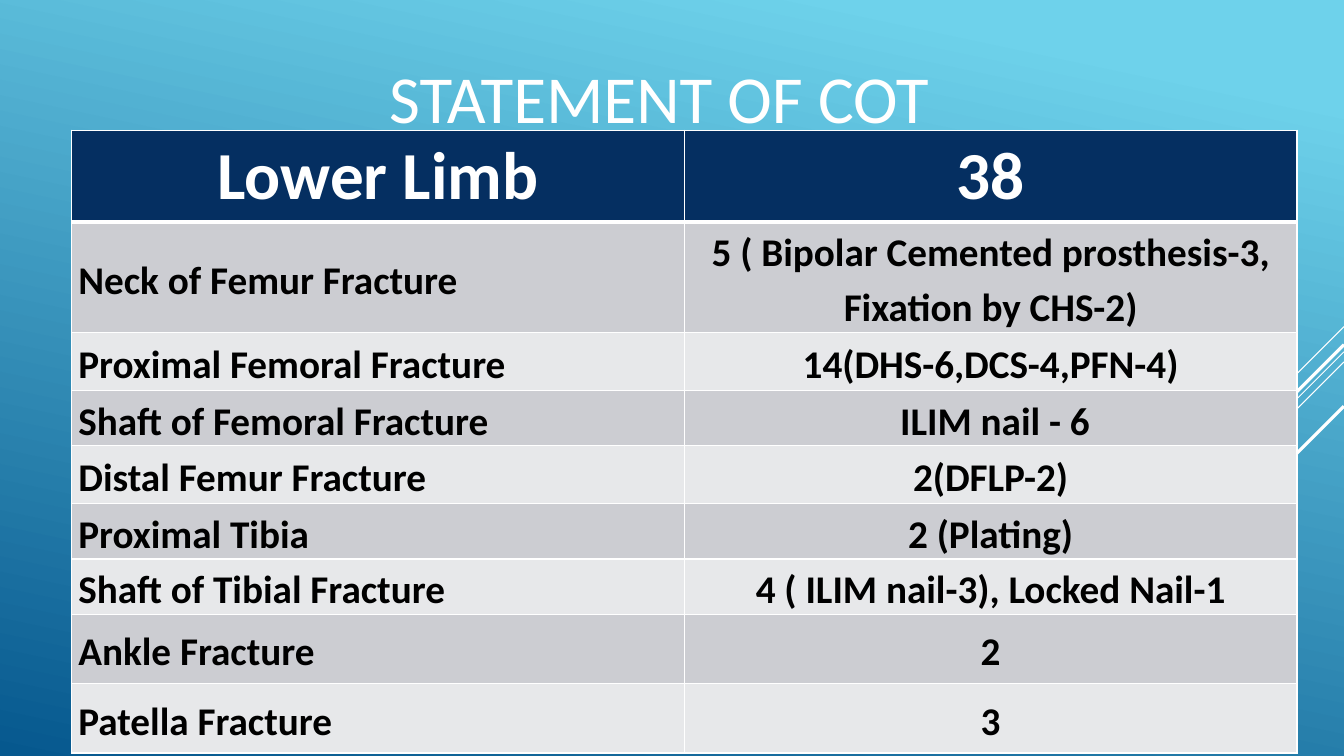
from dataclasses import dataclass

from lxml import etree
from pptx import Presentation
from pptx import util as u
from pptx.dml.color import RGBColor
from pptx.enum import shapes, text
from pptx.oxml import ns

FONT = "Calibri"
WHITE, BLACK, NAVY = "FFFFFF", "000000", "052F61"
BANDS = ("CCCDD2", "E7E8EA")
SLIDE_WIDTH, SLIDE_HEIGHT = 960, 540
COLUMN_WIDTH = 437.75
HEADER_RULE, THIN_RULE = 3, 1


@dataclass
class Diagonal:
    """A 45-degree line running down and left from the right slide edge."""
    top: float
    drop: float
    weight: float


@dataclass
class Row:
    label: str
    value: str
    height: float


DIAGONALS = [
    Diagonal(233.3, 72, 0.75),
    Diagonal(251.3, 234.7, 0.75),
    Diagonal(258.5, 149, 0.75),
    Diagonal(246.2, 137.5, 2.25),
    Diagonal(290.2, 100, 2.25),
]

ROWS = [
    Row("Lower Limb", "38", 65.8),
    Row("Neck of Femur Fracture",
        "5 ( Bipolar Cemented prosthesis-3, Fixation by CHS-2)", 78.6),
    Row("Proximal Femoral Fracture", "14(DHS-6,DCS-4,PFN-4)", 41.5),
    Row("Shaft of Femoral Fracture", " ILIM nail - 6", 39.5),
    Row("Distal Femur Fracture", "2(DFLP-2)", 41.5),
    Row("Proximal Tibia", "2 (Plating)", 39.5),
    Row("Shaft of Tibial Fracture", "4 ( ILIM nail-3), Locked Nail-1", 39.5),
    Row("Ankle Fracture", "2", 49.5),
    Row("Patella Fracture", "3", 49.5),
]

HEADER_FORMAT = {"size": u.Pt(48), "bold": True, "name": FONT}
BODY_FORMAT = {"size": u.Pt(28), "bold": True, "name": FONT}
TITLE_FORMAT = {"size": u.Pt(48), "bold": False, "name": FONT}
BODY_CELL = {
    "vertical_anchor": text.MSO_ANCHOR.MIDDLE,
    "margin_left": u.Pt(5), "margin_right": u.Pt(5),
    "margin_top": 0, "margin_bottom": 0,
}


def color(value: str) -> RGBColor:
    return RGBColor.from_string(value)


def apply(target, values: dict) -> None:
    """Set each named attribute of the target."""
    for name, value in values.items():
        setattr(target, name, value)


def write(paragraph, content: str, font_format: dict, font_color: str) -> None:
    run = paragraph.add_run()
    run.text = content
    apply(run.font, font_format)
    run.font.color.rgb = color(font_color)


def paint_background(slide) -> None:
    fill = slide.background.fill
    fill.gradient()
    fill.gradient_angle = 258
    stops = ((0.1, "6ED2EB"), (1, "06588E"))
    for stop, (position, value) in zip(fill.gradient_stops, stops):
        stop.position = position
        stop.color.rgb = color(value)


def draw_diagonal(slide, diagonal: Diagonal) -> None:
    connector = slide.shapes.add_connector(
        shapes.MSO_CONNECTOR.STRAIGHT,
        u.Pt(SLIDE_WIDTH), u.Pt(diagonal.top),
        u.Pt(SLIDE_WIDTH - diagonal.drop), u.Pt(diagonal.top + diagonal.drop))
    connector.line.color.rgb = color(WHITE)
    connector.line.width = u.Pt(diagonal.weight)
    etree.SubElement(connector._element.spPr, ns.qn("a:effectLst"))


def draw_title(slide) -> None:
    box = slide.shapes.add_textbox(u.Pt(51), u.Pt(12), u.Pt(798), u.Pt(114.5))
    apply(box.text_frame, {
        "word_wrap": True,
        "vertical_anchor": text.MSO_ANCHOR.MIDDLE,
        "margin_left": u.Pt(227),
    })
    write(box.text_frame.paragraphs[0], "STATEMENT OF COT",
          TITLE_FORMAT, WHITE)


def set_borders(cell, top: float, bottom: float) -> None:
    properties = cell._tc.get_or_add_tcPr()
    weights = {"lnL": THIN_RULE, "lnR": THIN_RULE, "lnT": top, "lnB": bottom}
    for index, (tag, weight) in enumerate(weights.items()):
        line = etree.Element(ns.qn(f"a:{tag}"), w=str(u.Pt(weight)))
        fill = etree.SubElement(line, ns.qn("a:solidFill"))
        etree.SubElement(fill, ns.qn("a:srgbClr"), val=WHITE)
        properties.insert(index, line)


def fill_cell(cell, content: str, row: int, column: int) -> None:
    header = row == 0
    cell.fill.solid()
    cell.fill.fore_color.rgb = color(NAVY if header else BANDS[(row - 1) % 2])
    paragraph = cell.text_frame.paragraphs[0]
    if header or column == 1:
        paragraph.alignment = text.PP_ALIGN.CENTER
    if header:
        write(paragraph, content, HEADER_FORMAT, WHITE)
    else:
        apply(cell, BODY_CELL)
        paragraph.line_spacing = 1.15
        write(paragraph, content, BODY_FORMAT, BLACK)
    set_borders(cell, HEADER_RULE if row == 1 else THIN_RULE,
                HEADER_RULE if header else THIN_RULE)


def draw_table(slide) -> None:
    height = sum(row.height for row in ROWS)
    table = slide.shapes.add_table(
        len(ROWS), 2, u.Pt(51), u.Pt(93),
        u.Pt(2 * COLUMN_WIDTH), u.Pt(height)).table
    for column in table.columns:
        column.width = u.Pt(COLUMN_WIDTH)
    for index, row in enumerate(ROWS):
        table.rows[index].height = u.Pt(row.height)
        for column, content in enumerate((row.label, row.value)):
            fill_cell(table.cell(index, column), content, index, column)


def main() -> None:
    presentation = Presentation()
    presentation.slide_width = u.Pt(SLIDE_WIDTH)
    presentation.slide_height = u.Pt(SLIDE_HEIGHT)
    slide = presentation.slides.add_slide(presentation.slide_layouts[6])
    paint_background(slide)
    for diagonal in DIAGONALS:
        draw_diagonal(slide, diagonal)
    draw_title(slide)
    draw_table(slide)
    presentation.save("out.pptx")


if __name__ == "__main__":
    main()
